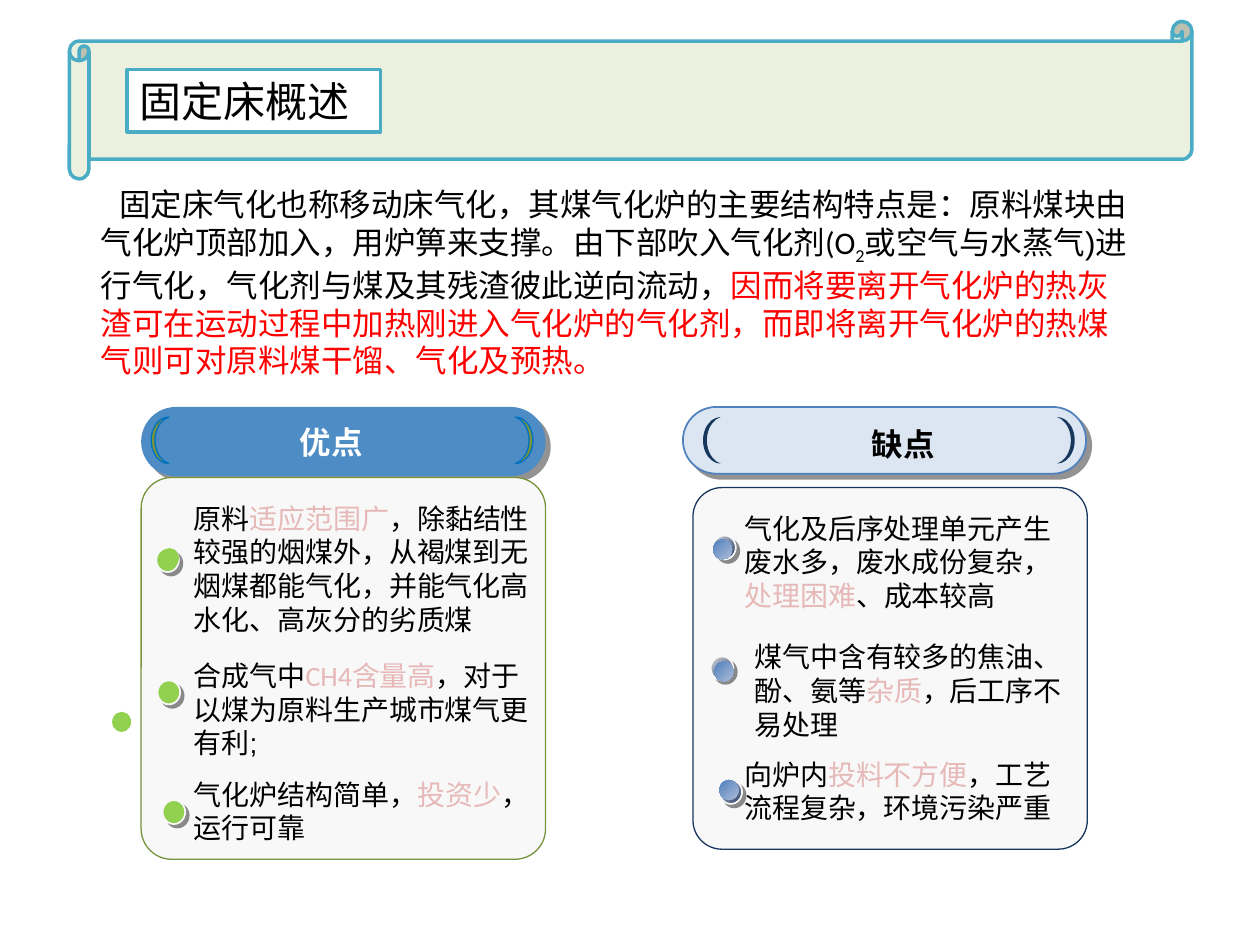
from pptx import Presentation
from pptx.dml.color import RGBColor
from pptx.enum.shapes import MSO_SHAPE as SHAPE
from pptx.enum.text import MSO_ANCHOR, MSO_AUTO_SIZE, PP_ALIGN
from pptx.oxml import parse_xml
from pptx.oxml.ns import nsdecls, qn
from pptx.util import Inches, Pt

COLORS = {
    "black": "000000", "white": "FFFFFF", "red": "FF0000",
    "cream": "EBF1DE", "teal": "4BACC6", "panel": "F8F8F8",
    "blue": "4D8CC5", "pale_blue": "DCE6F2", "mid_blue": "4F81BD",
    "navy": "17375E", "olive": "77933C", "moon_edge": "0070C0",
    "green": "92D050", "pink": "E6B9B8", "outline": "C0504D",
    "ball_light": "DDDDE1", "ball_dark": "223864", "face_light": "ADBCD8",
    "bar_shadow": "292929", "ball_shadow": "1C1C1C",
}


def rgb(name):
    return RGBColor.from_string(COLORS[name])


def paint(sp, fill, line=None, width=1):
    if isinstance(fill, tuple):
        sp.fill.gradient()
        sp.fill.gradient_angle = 315
        for stop, name in zip(sp.fill.gradient_stops, fill):
            stop.color.rgb = rgb(name)
    else:
        sp.fill.solid()
        sp.fill.fore_color.rgb = rgb(fill)
    if line:
        sp.line.color.rgb = rgb(line)
        sp.line.width = Pt(width)
    else:
        sp.line.fill.background()


def add_shape(slide, kind, box, fill, line=None, width=1, adj=None):
    sp = slide.shapes.add_shape(kind, *map(Inches, box))
    sp.shadow.inherit = False
    paint(sp, fill, line, width)
    if adj is not None:
        sp.adjustments[0] = adj
    return sp


def add_shadow(sp, color, distance):
    effects = sp._element.spPr.find(qn("a:effectLst"))
    effects.append(parse_xml(
        f'<a:outerShdw {nsdecls("a")} dist="{Pt(distance)}" dir="2700000" '
        f'algn="ctr" rotWithShape="0"><a:srgbClr val="{COLORS[color]}">'
        '<a:alpha val="50000"/></a:srgbClr></a:outerShdw>'))


def add_run(p, text, size, font, color="black", bold=False):
    r = p.add_run()
    r.text = text
    r.font.size = Pt(size)
    r.font.name = font
    r.font.bold = bold
    r.font.color.rgb = rgb(color)
    return r


def add_outline(r):
    r.font._element.insert(0, parse_xml(
        f'<a:ln {nsdecls("a")} w="{Pt(1.75)}"><a:solidFill>'
        f'<a:srgbClr val="{COLORS["outline"]}"/></a:solidFill></a:ln>'))


def add_text(slide, box):
    tf = slide.shapes.add_textbox(*map(Inches, box)).text_frame
    tf.word_wrap = True
    tf.auto_size = MSO_AUTO_SIZE.SHAPE_TO_FIT_TEXT
    return tf.paragraphs[0]


def add_banner(slide, box, title):
    x, y, w, h = box
    scroll = add_shape(slide, SHAPE.HORIZONTAL_SCROLL, box, "cream", "teal", 2)
    sp = slide.shapes.title
    scroll._element.addnext(sp._element)
    sp.left, sp.top = Inches(x + 0.46), Inches(y + 0.38)
    sp.width, sp.height = Inches(2.01), Inches(0.5)
    paint(sp, "white", "teal", 2)
    tf = sp.text_frame
    tf.vertical_anchor = MSO_ANCHOR.TOP
    tf.auto_size = MSO_AUTO_SIZE.NONE
    p = tf.paragraphs[0]
    p.alignment = PP_ALIGN.LEFT
    add_run(p, title, 24, "Noto Sans CJK JP")


def add_intro(slide, box, runs):
    p = add_text(slide, box)
    p._p.get_or_add_pPr().set("indent", str(Inches(0.15)))
    for text, font, color, baseline in runs:
        r = add_run(p, text, 18, font, color)
        if baseline:
            r.font._element.set("baseline", str(baseline))


def add_header(slide, box, label, label_box, style):
    x, y, w, h = box
    bar = add_shape(slide, SHAPE.ROUNDED_RECTANGLE, box, style["bar"],
                    style["bar_line"], 1, 0.5)
    add_shadow(bar, "bar_shadow", 4.2)
    left, right = style["moons"]
    for moon_x, flip in ((x + left, False), (x + w - right, True)):
        moon = add_shape(slide, SHAPE.MOON, (moon_x, y + 0.08, 0.14, 0.37),
                         style["moon"], style["moon_line"], 0.75, 0.22)
        if flip:
            moon._element.spPr.find(qn("a:xfrm")).set("flipH", "1")
    p = add_text(slide, label_box)
    p.alignment = PP_ALIGN.CENTER
    add_run(p, label, 18, "Arial", style["label"], True)


def add_panel(slide, box, items, balls, faces, style):
    x, y, w, h = box
    add_shape(slide, SHAPE.ROUNDED_RECTANGLE, box, "panel",
              style["edge"], 0.75, 0.08)
    for (dx, dy, tw, th), font, before, key, after, tail in items:
        p = add_text(slide, (x + dx, y + dy, tw, th))
        add_run(p, before, 16, font)
        add_outline(add_run(p, key, 16, font, "pink"))
        add_run(p, after, 16, font)
        if tail:
            add_run(p, tail, 16, "Arial")
    for dx, dy in balls:
        ball = add_shape(slide, SHAPE.OVAL, (x + dx, y + dy, 0.18, 0.19),
                         style["ball"], "panel")
        add_shadow(ball, "ball_shadow", 2.8)
    for dx, dy in faces:
        add_shape(slide, SHAPE.OVAL, (x + dx, y + dy, 0.15, 0.16), style["face"])


PROS = {"bar": "blue", "bar_line": None, "moon": "olive",
        "moon_line": "moon_edge", "moons": (0.08, 0.24), "label": "white",
        "edge": "olive", "ball": "green", "face": "green"}
CONS = {"bar": "pale_blue", "bar_line": "mid_blue", "moon": "navy",
        "moon_line": None, "moons": (0.16, 0.23), "label": "black",
        "edge": "navy", "ball": ("ball_light", "ball_dark"),
        "face": ("mid_blue", "face_light")}

INTRO = [
    ("固定床气化也称移动床气化，其煤气化炉的主要结构特点是：原料煤块由气化炉顶部加入，"
     "用炉箅来支撑。由下部吹入气化剂(O", "Calibri", "black", 0),
    ("2", "Calibri", "black", -25000),
    ("或空气与水蒸气", "Calibri", "black", 0),
    (")", "Arial", "black", 0),
    ("进行气化，气化剂与煤及其残渣彼此逆向流动，", "Calibri", "black", 0),
    ("因而将要离开气化炉的热灰渣可在运动过程中加热刚进入气化炉的气化剂，"
     "而即将离开气化炉的热煤气则可对原料煤干馏、气化及预热。", "Calibri", "red", 0),
]
PROS_ITEMS = [
    ((0.32, 0.14, 2.89, 1.18), "Arial", "原料", "适应范围广",
     "，除黏结性较强的烟煤外，从褐煤到无烟煤都能气化，并能气化高水化、高灰分的劣质煤", ""),
    ((0.32, 1.39, 2.89, 0.94), "Calibri", "合成气中", "CH4含量高",
     "，对于以煤为原料生产城市煤气更有利", ";"),
    ((0.32, 2.33, 2.89, 0.64), "Calibri", "气化炉结构简单，", "投资少",
     "，运行可靠", ""),
]
CONS_ITEMS = [
    ((0.31, 0.14, 2.71, 0.94), "Arial", "气化及后序处理单元产生废水多，废水成份复杂，",
     "处理困难", "、成本较高", ""),
    ((0.39, 1.16, 2.73, 0.94), "Arial", "煤气中含有较多的焦油、酚、氨等", "杂质",
     "，后工序不易处理", ""),
    ((0.31, 2.09, 2.66, 0.64), "Calibri", "向炉内", "投料不方便",
     "，工艺流程复杂，环境污染严重", ""),
]


def main():
    prs = Presentation()
    prs.slide_width, prs.slide_height = Inches(10), Inches(7.5)
    slide = prs.slides.add_slide(prs.slide_layouts[5])
    add_banner(slide, (0.55, 0.17, 8.91, 1.25), "固定床概述")
    add_header(slide, (1.12, 3.23, 3.21, 0.55), "优点",
               (1.43, 3.31, 2.4, 0.42), PROS)
    add_panel(slide, (1.12, 3.79, 3.21, 3.03), PROS_ITEMS,
              [(0.12, 0.56), (0.13, 1.61), (0.17, 2.56)],
              [(0.15, 0.56), (-0.23, 1.86)], PROS)
    add_header(slide, (5.42, 3.23, 3.2, 0.53), "缺点",
               (5.97, 3.32, 2.4, 0.42), CONS)
    add_panel(slide, (5.5, 3.87, 3.13, 2.87), CONS_ITEMS,
              [(0.16, 0.38), (0.14, 1.34), (0.21, 2.32)],
              [(0.16, 0.41), (0.17, 1.38), (0.21, 2.32)], CONS)
    add_intro(slide, (0.7, 1.42, 8.44, 1.61), INTRO)
    prs.save("out.pptx")


if __name__ == "__main__":
    main()
